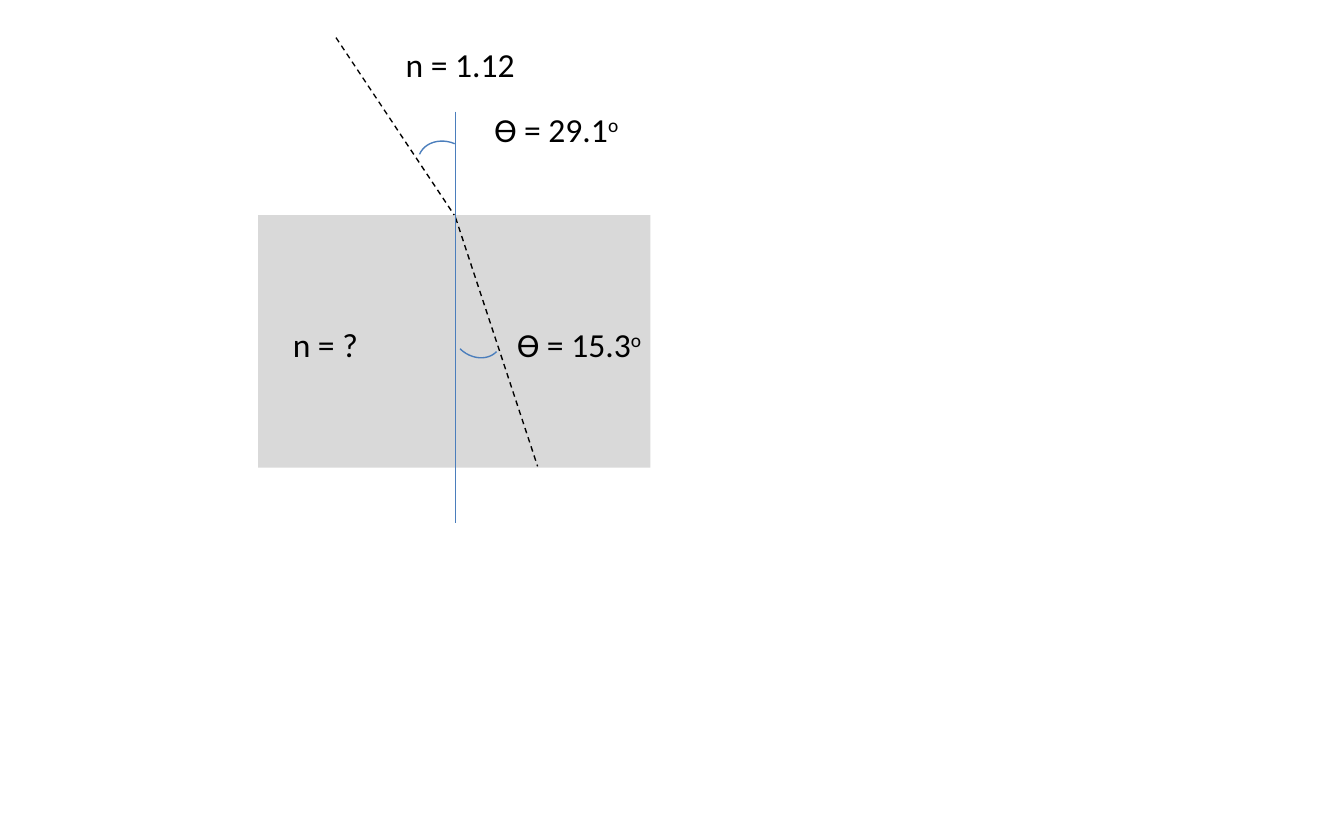
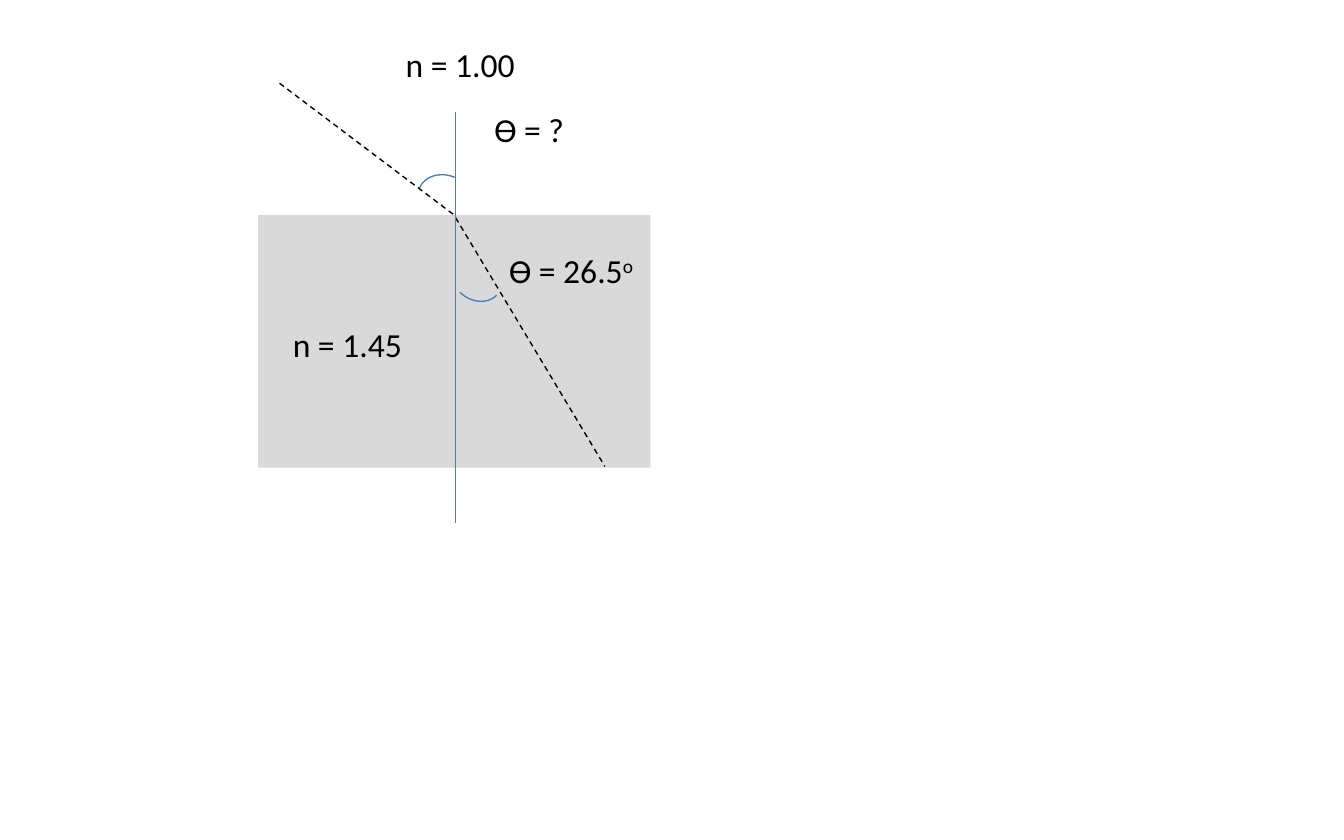
from dataclasses import dataclass

from lxml import etree
from pptx import Presentation
from pptx.dml.color import RGBColor
from pptx.enum.dml import MSO_LINE
from pptx.enum.shapes import MSO_CONNECTOR, MSO_SHAPE
from pptx.enum.text import MSO_AUTO_SIZE, PP_ALIGN
from pptx.oxml.ns import qn
from pptx.util import Inches, Pt

RECTANGLE = MSO_SHAPE.RECTANGLE
ARC = MSO_SHAPE.ARC
STRAIGHT = MSO_CONNECTOR.STRAIGHT
DASH = MSO_LINE.DASH
FIT_TEXT = MSO_AUTO_SIZE.SHAPE_TO_FIT_TEXT
LEFT = PP_ALIGN.LEFT

BLANK_LAYOUT = 6
LABEL_HEIGHT = 0.4
ARC_SIZE = (0.35, 0.42)
UPPER_ARC = {"left": 3.14, "rotation": 293}
LOWER_ARC = {"left": 3.37, "rotation": 134.3}
MEDIUM = (1.92, 1.6, 2.92, 1.88)
INCIDENCE = (3.38, 1.6)
REFRACTION = (3.39, 1.62)
NORMAL = ((3.39, 0.83), (3.39, 3.89))
EXIT_Y = 3.47


@dataclass(frozen=True)
class Theme:
    font: str = "Calibri"
    text_size: Pt = Pt(18)
    line_width: Pt = Pt(0.75)
    ink: RGBColor = RGBColor(0, 0, 0)
    medium: RGBColor = RGBColor(0xD9, 0xD9, 0xD9)
    accent: RGBColor = RGBColor(0x4B, 0x7E, 0xBC)


@dataclass(frozen=True)
class Refraction:
    upper_index: str
    lower_index: tuple
    ray_start: tuple
    exit_x: float
    upper_angle: tuple
    lower_angle: tuple
    lower_angle_at: tuple
    upper_arc_top: float
    lower_arc_top: float


REFRACTIONS = [
    Refraction(
        upper_index="n = 1.12",
        lower_index=("n = ?", 0.75),
        ray_start=(2.5, 0.28),
        exit_x=4,
        upper_angle=("ϴ = 29.1", 1.15, "o"),
        lower_angle=("ϴ = 15.3", 1.15, "o"),
        lower_angle_at=(3.75, 2.36),
        upper_arc_top=1.02,
        lower_arc_top=2.26,
    ),
    Refraction(
        upper_index="n = 1.00",
        lower_index=("n = 1.45", 1.08),
        ray_start=(2.08, 0.62),
        exit_x=4.5,
        upper_angle=("ϴ = ?", 0.73),
        lower_angle=("ϴ = 26.5", 1.15, "o"),
        lower_angle_at=(3.69, 1.81),
        upper_arc_top=1.27,
        lower_arc_top=1.84,
    ),
]


def apply_format(target, values):
    for attribute, value in values.items():
        setattr(target, attribute, value)


class Diagram:
    def __init__(self, deck, theme):
        self.theme = theme
        self.slide = deck.slides.add_slide(deck.slide_layouts[BLANK_LAYOUT])

    def block(self, box):
        block = self.slide.shapes.add_shape(RECTANGLE, *map(Inches, box))
        block.shadow.inherit = False
        block.fill.solid()
        block.fill.fore_color.rgb = self.theme.medium
        block.line.fill.background()

    def angle_arc(self, left, top, rotation):
        arc = self.slide.shapes.add_shape(ARC, *map(Inches, (left, top, *ARC_SIZE)))
        arc.shadow.inherit = False
        arc.rotation = rotation
        arc.fill.background()
        arc.line.color.rgb = self.theme.accent
        arc.line.width = self.theme.line_width

    def line(self, start, end, color, dash=None):
        line = self.slide.shapes.add_connector(STRAIGHT, *map(Inches, (*start, *end)))
        line.line.color.rgb = color
        apply_format(line.line, {"width": self.theme.line_width, "dash_style": dash})
        etree.SubElement(line.element.spPr, qn("a:effectLst"))

    def ray(self, start, end):
        self.line(start, end, self.theme.ink, DASH)

    def label(self, at, text, width, superscript=""):
        box = (*at, width, LABEL_HEIGHT)
        label = self.slide.shapes.add_textbox(*map(Inches, box))
        apply_format(label.text_frame, {"word_wrap": False, "auto_size": FIT_TEXT})
        paragraph = label.text_frame.paragraphs[0]
        paragraph.alignment = LEFT
        for part in filter(None, (text, superscript)):
            run = paragraph.add_run()
            run.text = part
            apply_format(run.font, {"name": self.theme.font, "size": self.theme.text_size})
            run.font.color.rgb = self.theme.ink
        if superscript:
            label.element.xpath(".//a:rPr")[-1].set("baseline", "30000")

    def draw(self, case):
        self.block(MEDIUM)
        self.label((2.08, 2.36), *case.lower_index)
        self.ray(case.ray_start, INCIDENCE)
        self.label((2.92, 0.28), case.upper_index, 1.08)
        self.ray(REFRACTION, (case.exit_x, EXIT_Y))
        self.angle_arc(top=case.upper_arc_top, **UPPER_ARC)
        self.label((3.58, 0.76), *case.upper_angle)
        self.angle_arc(top=case.lower_arc_top, **LOWER_ARC)
        self.label(case.lower_angle_at, *case.lower_angle)
        self.line(*NORMAL, self.theme.accent)


def main():
    deck = Presentation()
    apply_format(deck, {"slide_width": Inches(10), "slide_height": Inches(6.25)})
    theme = Theme()
    for case in REFRACTIONS:
        Diagram(deck, theme).draw(case)
    deck.save("out.pptx")


if __name__ == "__main__":
    main()
